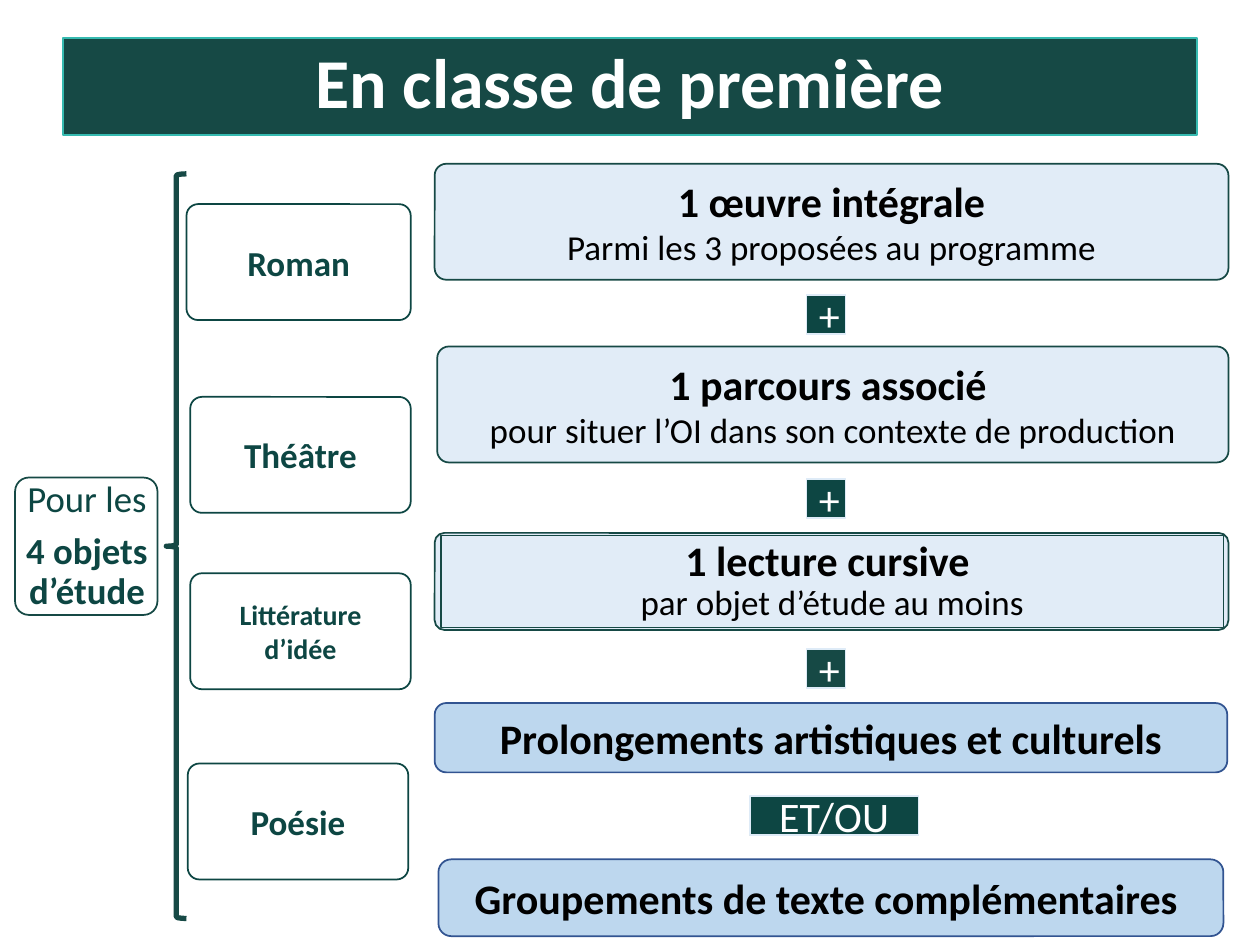
"""Build the slide listing what is studied in the première class."""
from dataclasses import dataclass
from typing import Optional

import lxml.etree
import pptx
import pptx.dml.color
import pptx.enum.shapes
import pptx.enum.text
import pptx.oxml.ns
import pptx.util

Inches = pptx.util.Inches
Pt = pptx.util.Pt
RGBColor = pptx.dml.color.RGBColor
SHAPE = pptx.enum.shapes.MSO_SHAPE

WHITE = RGBColor(0xFF, 0xFF, 0xFF)
BLACK = RGBColor(0x00, 0x00, 0x00)
GREEN = RGBColor(0x16, 0x49, 0x45)
DARK_GREEN = RGBColor(0x0D, 0x46, 0x43)
TEAL = RGBColor(0x36, 0xBA, 0xB0)
PALE_BLUE = RGBColor(0xDE, 0xEB, 0xF7)
LIGHT_BLUE = RGBColor(0xBD, 0xD7, 0xEE)
BLUE = RGBColor(0x32, 0x54, 0x91)


@dataclass(frozen=True)
class Line:
    text: str
    size: float
    bold: bool = False


@dataclass(frozen=True)
class Box:
    left: float
    top: float
    width: float
    height: float
    fill: Optional[RGBColor]
    line: RGBColor
    kind: SHAPE = SHAPE.ROUNDED_RECTANGLE
    radius: Optional[float] = None
    alpha: int = 100
    weight: float = 1


def draw_box(s, box: Box):
    sp = s.shapes.add_shape(box.kind, Inches(box.left), Inches(box.top),
                            Inches(box.width), Inches(box.height))
    sp.shadow.inherit = False
    if box.radius is not None:
        sp.adjustments[0] = box.radius
    if box.fill is None:
        sp.fill.background()
    else:
        sp.fill.solid()
        sp.fill.fore_color.rgb = box.fill
        if box.alpha < 100:
            color = sp.fill._xPr.find(".//" + pptx.oxml.ns.qn("a:srgbClr"))
            lxml.etree.SubElement(color, pptx.oxml.ns.qn("a:alpha"),
                                  val=str(box.alpha * 1000))
    sp.line.color.rgb = box.line
    sp.line.width = Pt(box.weight)
    return sp


def style(font, line: Line) -> None:
    font.size = Pt(line.size)
    font.bold = line.bold


def write_paragraph(p, lines: list[Line], color: RGBColor,
                    spacing: Optional[float] = None, after: float = 0) -> None:
    p.alignment = pptx.enum.text.PP_ALIGN.CENTER
    p.line_spacing = spacing
    p.space_after = Pt(after)
    p.font.name = "Calibri"
    p.font.color.rgb = color
    if len(lines) == 1:
        style(p.font, lines[0])
    for i, line in enumerate(lines):
        if i:
            p.add_line_break()
        r = p.add_run()
        r.text = line.text
        if len(lines) > 1:
            style(r.font, line)


def prepare_frame(sp, side: float = 0.1, edge: float = 0.05):
    tf = sp.text_frame
    tf.word_wrap = True
    tf.vertical_anchor = pptx.enum.text.MSO_ANCHOR.MIDDLE
    tf.margin_left = tf.margin_right = Inches(side)
    tf.margin_top = tf.margin_bottom = Inches(edge)
    return tf


def draw_label(s, box: Box, lines: list[Line], color: RGBColor,
               spacing: Optional[float] = None) -> None:
    tf = prepare_frame(draw_box(s, box))
    write_paragraph(tf.paragraphs[0], lines, color, spacing)


def draw_objects(s) -> None:
    draw_box(s, Box(0.12, 3.79, 1.13, 1.09, WHITE, GREEN, radius=0.1))
    sp = s.shapes.add_textbox(Inches(0.13), Inches(3.83), Inches(1.12), Inches(1.02))
    tf = prepare_frame(sp, 0.04, 0.03)
    write_paragraph(tf.paragraphs[0], [Line("Pour les", 21)], DARK_GREEN, 0.9, 7)
    write_paragraph(tf.add_paragraph(), [Line("4 objets d’étude", 21, True)],
                    DARK_GREEN, 0.9, 7)
    draw_box(s, Box(1.32, 1.38, 0.16, 5.91, None, GREEN, SHAPE.LEFT_BRACE, weight=3))
    for text, left, top, width, size, alpha in (
            ("Roman", 1.48, 1.62, 1.78, 20, 90),
            ("Théâtre", 1.51, 3.15, 1.75, 20, 100),
            ("Littérature d’idée", 1.51, 4.55, 1.75, 16, 90),
            ("Poésie", 1.49, 6.06, 1.75, 20, 90)):
        box = Box(left, top, width, 0.92, WHITE, DARK_GREEN, radius=0.1, alpha=alpha)
        draw_label(s, box, [Line(text, size, True)], DARK_GREEN)


def draw_requirements(s) -> None:
    for head, detail, left, top, width in (
            ("1 œuvre intégrale", "Parmi les 3 proposées au programme", 3.45, 1.3, 6.3),
            ("1 parcours associé ", "pour situer l’OI dans son contexte de production",
             3.47, 2.75, 6.28)):
        box = Box(left, top, width, 0.92, PALE_BLUE, GREEN, radius=0.1, alpha=90)
        draw_label(s, box, [Line(head, 24, True), Line(detail, 20)], BLACK)

    draw_box(s, Box(3.45, 4.23, 6.3, 0.77, PALE_BLUE, GREEN, radius=0.1, alpha=90))
    sp = draw_box(s, Box(3.5, 4.25, 6.21, 0.73, None, GREEN, SHAPE.RECTANGLE, weight=0.75))
    reading = [Line("1 lecture cursive ", 24, True),
               Line("par objet d’étude au moins", 20)]
    write_paragraph(prepare_frame(sp, 0.11, 0.07).paragraphs[0], reading, BLACK, 0.9, 7)

    for text, left, top, width, height in (
            ("Prolongements artistiques et culturels", 3.45, 5.58, 6.29, 0.55),
            ("Groupements de texte complémentaires ", 3.48, 6.82, 6.23, 0.61)):
        draw_label(s, Box(left, top, width, height, LIGHT_BLUE, BLUE),
                   [Line(text, 24, True)], BLACK)

    for text, left, top, width, fill in (
            ("+", 6.4, 2.34, 0.31, DARK_GREEN),
            ("+", 6.4, 3.8, 0.31, DARK_GREEN),
            ("+", 6.4, 5.15, 0.31, GREEN),
            ("ET/OU", 5.95, 6.32, 1.34, DARK_GREEN)):
        box = Box(left, top, width, 0.31, fill, PALE_BLUE, SHAPE.RECTANGLE)
        draw_label(s, box, [Line(text, 24)], WHITE)


def main() -> None:
    prs = pptx.Presentation()
    prs.slide_width, prs.slide_height = Inches(10), Inches(7.5)
    s = prs.slides.add_slide(prs.slide_layouts[6])
    draw_label(s, Box(0.5, 0.3, 9, 0.77, GREEN, TEAL, SHAPE.RECTANGLE),
               [Line("En classe de première", 40, True)], WHITE, 0.9)
    draw_objects(s)
    draw_requirements(s)
    prs.save("out.pptx")


if __name__ == "__main__":
    main()
